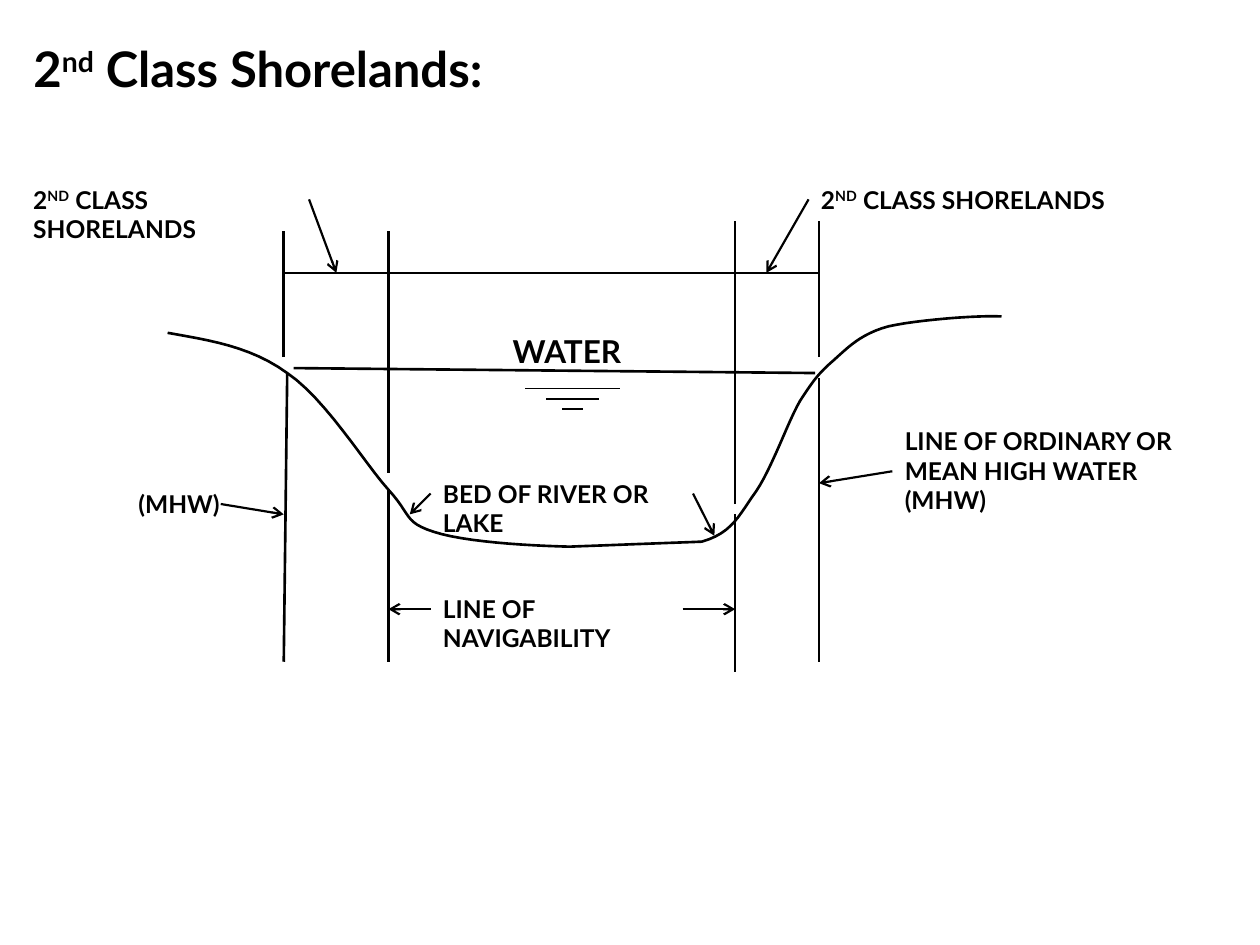
"""Build a slide that shows a cross-section of second class shorelands."""
import pptx
import pptx.util
import pptx.dml.color
import pptx.enum.shapes
import pptx.enum.text
import pptx.oxml.ns
import lxml.etree

Cm = pptx.util.Cm
Pt = pptx.util.Pt
BLACK = pptx.dml.color.RGBColor(0, 0, 0)
LEFT = pptx.enum.text.PP_ALIGN.LEFT
CENTER = pptx.enum.text.PP_ALIGN.CENTER
qn = pptx.oxml.ns.qn

deck = pptx.Presentation()
deck.slide_width, deck.slide_height = Cm(25.4), Cm(19.05)
slide = deck.slides.add_slide(deck.slide_layouts[5])
shapes = slide.shapes


def write(box, place, text, size, align=LEFT):
    """Place a box and fill it; text between carets is raised."""
    box.left, box.top, box.width, box.height = map(Cm, place)
    frame = box.text_frame
    frame.word_wrap = True
    frame.auto_size = pptx.enum.text.MSO_AUTO_SIZE.SHAPE_TO_FIT_TEXT
    frame.vertical_anchor = pptx.enum.text.MSO_ANCHOR.TOP
    para = frame.paragraphs[0]
    para.alignment = align
    for index, part in enumerate(text.split("^")):
        run = para.add_run()
        run.text = part
        run.font.name = "Lato"
        run.font.size = Pt(size)
        run.font.bold = True
        run.font.color.rgb = BLACK
        if index % 2:
            run.font._element.set("baseline", "30000")


def draw(start, end, width, arrow=False):
    """Draw a straight line, with an open arrowhead at its end if asked."""
    line = shapes.add_connector(
        pptx.enum.shapes.MSO_CONNECTOR.STRAIGHT, *map(Cm, start + end))
    line.line.color.rgb = BLACK
    line.line.width = Pt(width)
    if arrow:
        lxml.etree.SubElement(line.line._get_or_add_ln(), qn("a:tailEnd"), type="arrow")
    lxml.etree.SubElement(line._element.spPr, qn("a:effectLst"))


write(shapes.title, (0.42, 0.64, 14.6, 1.45), "2^nd^ Class Shorelands:", 28)

start = (3.38, 6.71)
curves = [
    ((4.22, 6.86), (5.05, 6.98), (5.79, 7.52)),
    ((6.55, 8.03), (7.34, 9.32), (7.82, 9.86)),
    ((8.31, 10.39), (8.13, 10.52), (8.74, 10.72)),
    ((9.35, 10.92), (10.59, 11), (11.48, 11.02)),
    ((11.48, 11.02), (14.15, 10.92), (14.15, 10.92)),
    ((14.78, 10.74), (14.91, 10.36), (15.24, 9.91)),
    ((15.57, 9.42), (15.88, 8.51), (16.13, 8.08)),
    ((16.41, 7.65), (16.51, 7.52), (16.81, 7.26)),
    ((17.09, 7.01), (17.35, 6.73), (17.91, 6.58)),
    ((18.47, 6.45), (19.76, 6.35), (20.19, 6.38)),
]
steps = 12
points = []
last = start
for one, two, end in curves:
    for step in range(1, steps + 1):
        t = step / steps
        u = 1 - t
        points.append([
            Cm(u**3 * a + 3 * u * u * t * b + 3 * u * t * t * c + t**3 * d)
            for a, b, c, d in zip(last, one, two, end)])
    last = end
form = shapes.build_freeform(*map(Cm, start))
form.add_line_segments(points, close=False)
ground = form.convert_to_shape()
ground.fill.background()
ground.line.color.rgb = BLACK
ground.line.width = Pt(1.5)
ground.shadow.inherit = False

bank, nav, far, shore = 5.72, 7.83, 14.82, 16.51
for first, end in [
    ((5.92, 7.42), (16.43, 7.52)),
    ((5.79, 7.52), (bank, 13.34)),
    ((nav, 9.86), (nav, 13.34)),
    ((shore, 7.62), (shore, 13.34)),
    ((far, 10.36), (far, 13.55)),
    ((bank, 7.2), (bank, 4.66)),
    ((nav, 9.53), (nav, 4.66)),
    ((far, 10.16), (far, 4.45)),
    ((shore, 7.2), (shore, 4.45)),
    ((bank, 5.5), (shore, 5.5)),
]:
    draw(first, end, 1.5)

for row, half in enumerate([0.95, 0.53, 0.21]):
    level = 7.83 + 0.21 * row
    draw((11.54 + half, level), (11.54 - half, level), 1)

for first, end in [
    ((6.23, 4.02), (6.78, 5.5)),
    ((16.3, 4.02), (15.45, 5.5)),
    ((8.68, 12.28), (nav, 12.28)),
    ((13.76, 12.28), (far, 12.28)),
    ((17.99, 9.5), (shore, 9.74)),
    ((4.45, 10.16), (bank, 10.37)),
    ((8.68, 9.95), (8.26, 10.37)),
    ((13.97, 9.95), (14.4, 10.8)),
]:
    draw(first, end, 1.25, True)

for place, text, size, align in [
    ((8.68, 11.85, 5.71, 0.86), "LINE OF NAVIGABILITY", 14, LEFT),
    ((16.3, 3.6, 6.35, 0.86), "2^ND^ CLASS SHORELANDS", 14, LEFT),
    ((0.42, 3.6, 5.82, 0.86), "2^ND^ CLASS SHORELANDS", 14, LEFT),
    ((17.99, 8.47, 6.35, 2.05), "LINE OF ORDINARY OR MEAN HIGH WATER (MHW)", 14, LEFT),
    ((2.54, 9.74, 2.34, 0.86), "(MHW)", 14, LEFT),
    ((8.68, 6.56, 5.5, 1.02), "WATER", 18, CENTER),
    ((8.68, 9.53, 5.71, 0.86), "BED OF RIVER OR LAKE", 14, LEFT),
]:
    write(shapes.add_textbox(0, 0, 0, 0), place, text, size, align)

deck.save("out.pptx")
